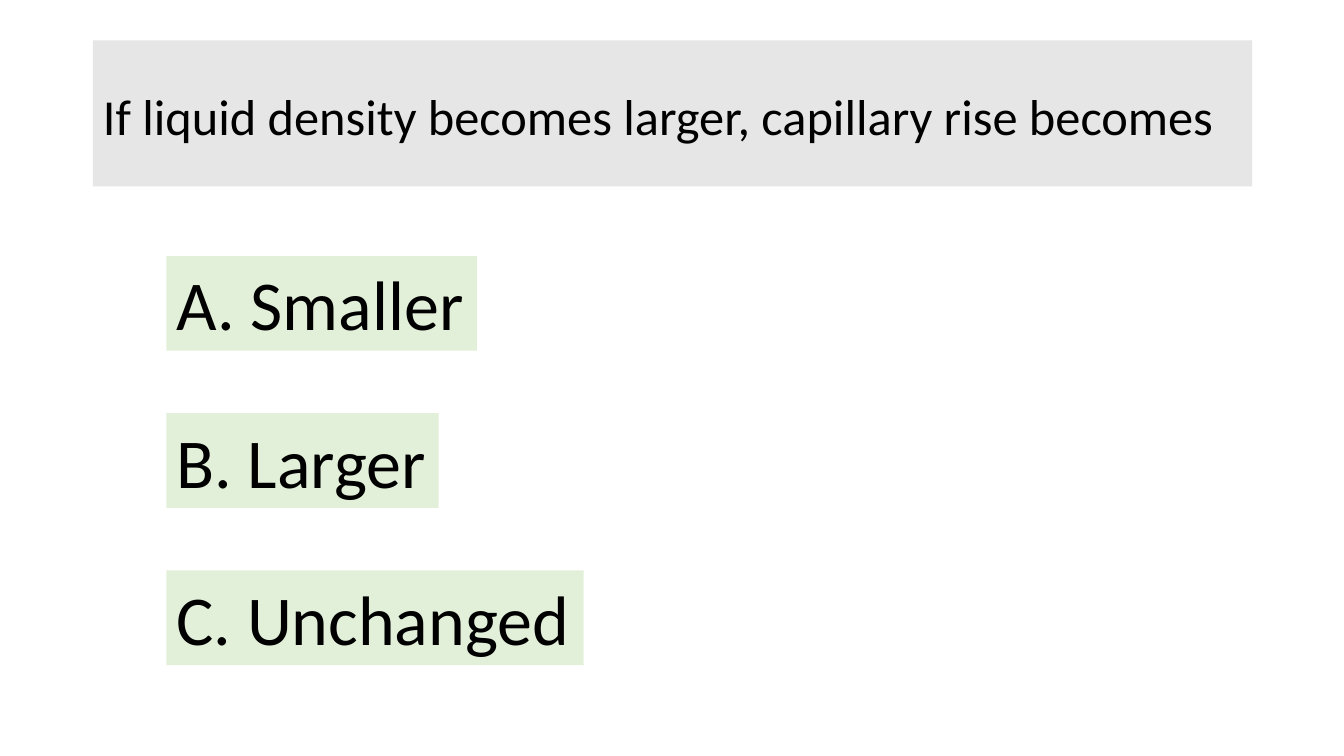
"""Build a multiple-choice slide on capillary rise and liquid density."""
import pptx
import pptx.util
from pptx.dml.color import RGBColor
from pptx.enum.text import MSO_ANCHOR, MSO_AUTO_SIZE, PP_ALIGN

QUESTION = "If liquid density becomes larger, capillary rise becomes"
ANSWERS = [("A. Smaller", 3.08), ("B. Larger", 2.7), ("C. Unchanged", 4.14)]

THEME = {
    "font": "Calibri",
    "text": "000000",
    "question_fill": "E7E6E6",
    "answer_fill": "E2F0D9",
    "question_size": 36,
    "answer_size": 50,
}

SLIDE_W, SLIDE_H = 13.33, 7.5
QUESTION_BOX = (0.92, 0.4, 11.5, 1.45)
ANSWER_LEFT, ANSWER_TOP, ANSWER_H, ANSWER_STEP = 1.65, 2.54, 0.94, 1.56


def fill_box(sp, text, role):
    sp.fill.solid()
    sp.fill.fore_color.rgb = RGBColor.from_string(THEME[f"{role}_fill"])
    p = sp.text_frame.paragraphs[0]
    p.text = text
    p.alignment = PP_ALIGN.LEFT
    p.font.name = THEME["font"]
    p.font.size = pptx.util.Pt(THEME[f"{role}_size"])
    p.font.color.rgb = RGBColor.from_string(THEME["text"])
    return p


def add_question(s):
    sp = s.shapes.title
    sp.left, sp.top, sp.width, sp.height = map(pptx.util.Inches, QUESTION_BOX)
    p = fill_box(sp, QUESTION, "question")
    p.line_spacing = 1.07
    p.space_before = pptx.util.Pt(0)
    p.space_after = pptx.util.Pt(8)
    tf = sp.text_frame
    tf.word_wrap = True
    tf.auto_size = MSO_AUTO_SIZE.NONE
    tf.vertical_anchor = MSO_ANCHOR.MIDDLE


def add_answers(s):
    for row, (answer, width) in enumerate(ANSWERS):
        box = (ANSWER_LEFT, ANSWER_TOP + row * ANSWER_STEP, width, ANSWER_H)
        sp = s.shapes.add_textbox(*map(pptx.util.Inches, box))
        fill_box(sp, answer, "answer")
        sp.text_frame.word_wrap = False
        sp.text_frame.auto_size = MSO_AUTO_SIZE.SHAPE_TO_FIT_TEXT


def main():
    prs = pptx.Presentation()
    prs.slide_width = pptx.util.Inches(SLIDE_W)
    prs.slide_height = pptx.util.Inches(SLIDE_H)
    s = prs.slides.add_slide(prs.slide_layouts.get_by_name("Title Only"))
    add_question(s)
    add_answers(s)
    prs.save("out.pptx")


if __name__ == "__main__":
    main()
